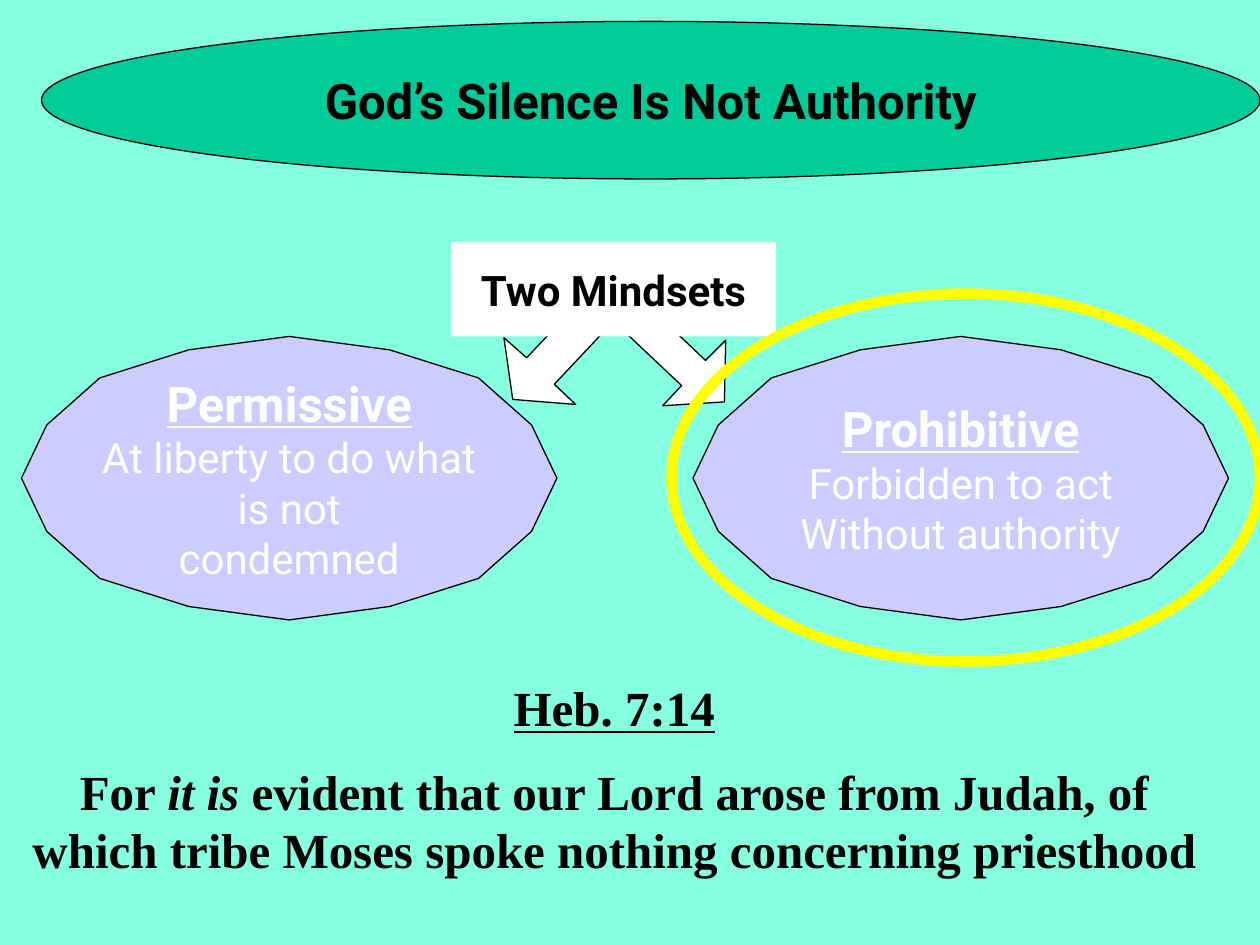
from dataclasses import dataclass

from pptx import Presentation
from pptx.dml.color import RGBColor as RGB
from pptx.enum.shapes import MSO_SHAPE as Shape
from pptx.enum.text import MSO_ANCHOR as Anchor, MSO_AUTO_SIZE as AutoSize, PP_ALIGN as Align
from pptx.util import Inches, Pt


@dataclass(frozen=True)
class Theme:
    background: RGB = RGB(0x85, 0xFF, 0xE0)
    banner: RGB = RGB(0x00, 0xCC, 0x99)
    star: RGB = RGB(0xCC, 0xCC, 0xFF)
    highlight: RGB = RGB(0xFF, 0xFF, 0x00)
    white: RGB = RGB(0xFF, 0xFF, 0xFF)
    black: RGB = RGB(0x00, 0x00, 0x00)
    sans: str = "Roboto"
    serif: str = "Times New Roman"
    heading: int = 28
    body: int = 24
    outline: float = 0.75
    ring: float = 6


class SlideBuilder:
    def __init__(self, slide, theme):
        self.slide, self.theme = slide, theme
        bg = slide.background.fill
        bg.solid()
        bg.fore_color.rgb = theme.background

    def paint(self, sp, fill=None, line=None, width=None):
        sp.shadow.inherit = False
        if fill is None:
            sp.fill.background()
        else:
            sp.fill.solid()
            sp.fill.fore_color.rgb = fill
        if line is None:
            sp.line.fill.background()
        else:
            sp.line.color.rgb = line
            sp.line.width = Pt(width or self.theme.outline)
        return sp

    def shape(self, kind, box, parent=None, **paint):
        shapes = (parent or self.slide).shapes
        return self.paint(shapes.add_shape(kind, *map(Inches, box)), **paint)

    def format(self, p, size, color, font=None, bold=False, underline=False):
        p.alignment = Align.CENTER
        for r in p.runs:
            f = r.font
            f.name, f.size, f.color.rgb = font or self.theme.sans, Pt(size), color
            f.bold, f.underline = bold, underline

    def title(self, box, text):
        """Banner ellipse with the title placeholder on top of it."""
        t = self.theme
        banner = self.shape(Shape.OVAL, box, fill=t.banner, line=t.black)
        title = self.slide.shapes.title
        banner.element.addnext(title.element)
        title.left, title.top, title.width, title.height = map(Inches, box)
        tf = title.text_frame
        tf.text = text
        tf.vertical_anchor = Anchor.MIDDLE
        self.format(tf.paragraphs[0], t.heading, t.black, bold=True)

    def mindset(self, left, heading, lines):
        """Eight-point star with an underlined heading and plain lines."""
        t = self.theme
        sp = self.shape(Shape.STAR_8_POINT, (left, 2.67, 4.25, 2.25), fill=t.star, line=t.black)
        sp.adjustments[0] = 0.49
        tf = sp.text_frame
        tf.text = "\n".join([heading, *lines])
        tf.word_wrap = False
        tf.vertical_anchor = Anchor.MIDDLE
        first, *rest = tf.paragraphs
        self.format(first, t.heading, t.white, bold=True, underline=True)
        for p in rest:
            self.format(p, t.body, t.white)

    def branch(self, box, text, outline):
        """Label in front of a two-headed arrow, grouped; outline in 1/100 inch."""
        t = self.theme
        group = self.slide.shapes.add_group_shape()
        fb = group.shapes.build_freeform(*outline[0], scale=Inches(0.01))
        fb.add_line_segments(outline[1:], close=True)
        self.paint(fb.convert_to_shape(), fill=t.white, line=t.black)
        tf = self.shape(Shape.RECTANGLE, box, parent=group, fill=t.white).text_frame
        tf.text = text
        tf.word_wrap = False
        tf.vertical_anchor = Anchor.MIDDLE
        self.format(tf.paragraphs[0], t.body, t.black, bold=True)

    def ring(self, box):
        t = self.theme
        self.shape(Shape.OVAL, box, line=t.highlight, width=t.ring)

    def scripture(self, box, reference, verse):
        """Reference over a verse given as (text, italic) parts."""
        t = self.theme
        tf = self.slide.shapes.add_textbox(*map(Inches, box)).text_frame
        tf.text = reference
        tf.word_wrap = True
        tf.auto_size = AutoSize.SHAPE_TO_FIT_TEXT
        first, p = tf.paragraphs[0], tf.add_paragraph()
        for text, italic in verse:
            r = p.add_run()
            r.text = text
            r.font.italic = italic
        first.space_before, p.space_before = Pt(3), Pt(14)
        self.format(first, t.heading, t.black, t.serif, bold=True, underline=True)
        self.format(p, t.heading, t.black, t.serif, bold=True)


def main():
    prs = Presentation()
    prs.slide_width, prs.slide_height = Inches(10), Inches(7.5)
    s = SlideBuilder(prs.slides.add_slide(prs.slide_layouts[5]), Theme())

    # Title banner
    s.title((0.33, 0.17, 9.67, 1.25), "God’s Silence Is Not Authority")

    # The two mindsets
    s.mindset(0.17, "Permissive", ["At liberty to do what", "is not", "condemned"])
    s.mindset(5.5, "Prohibitive", ["Forbidden to act", "Without authority"])

    # Label branching to both
    arrow = [(407, 317), (457, 321), (440, 305), (487, 255), (541, 306), (526, 322),
             (575, 319), (576, 270), (560, 286), (484, 214), (418, 284), (400, 268)]
    s.branch((3.58, 1.92, 2.58, 0.75), "Two Mindsets", arrow)

    # Highlight on the right-hand mindset
    s.ring((5.33, 2.33, 4.67, 2.92))

    # Scripture
    s.scripture((0, 5.33, 9.75, 1.74), "Heb. 7:14", [
        ("For ", False),
        ("it is", True),
        (" evident that our Lord arose from Judah, of which tribe Moses spoke nothing "
         "concerning priesthood", False),
    ])

    prs.save("out.pptx")


if __name__ == "__main__":
    main()
